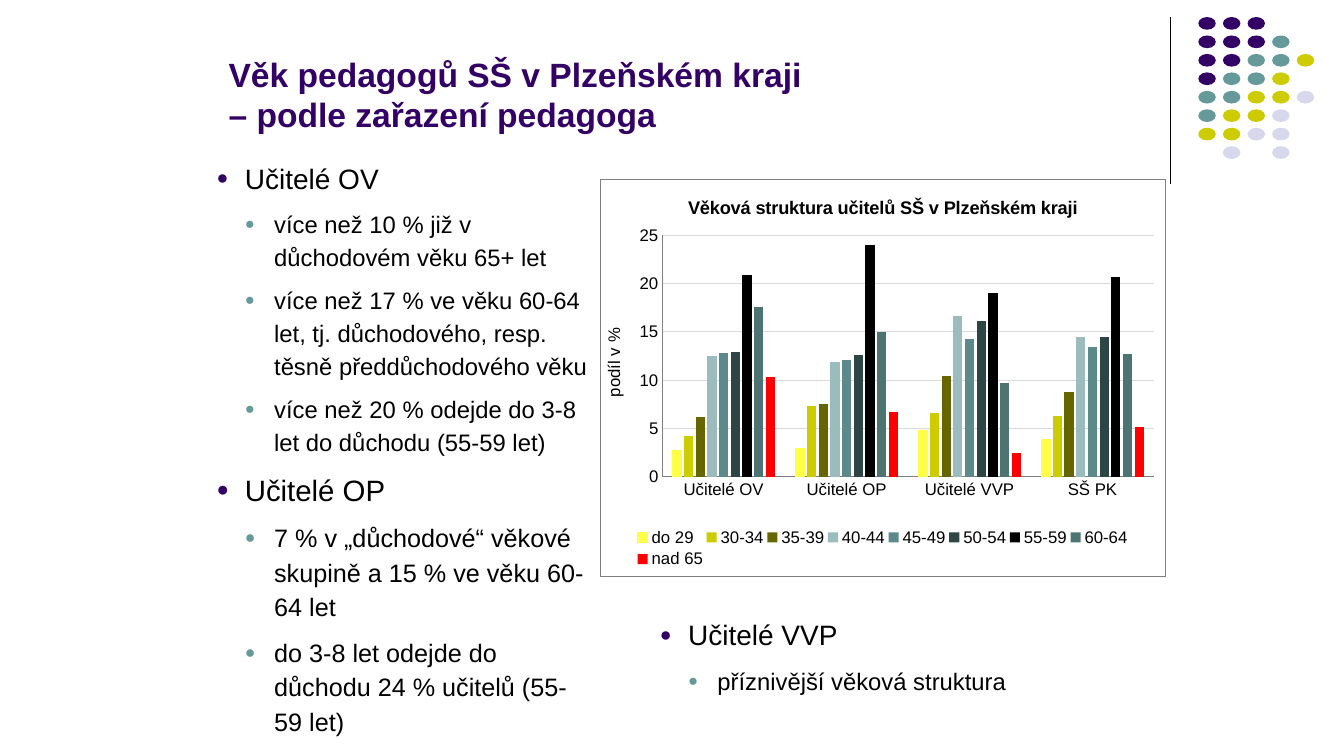
from lxml import etree
from pptx import Presentation
from pptx.chart.data import CategoryChartData
from pptx.dml.color import RGBColor
from pptx.enum.chart import XL_CHART_TYPE, XL_LEGEND_POSITION, XL_TICK_MARK
from pptx.enum.shapes import MSO_CONNECTOR, MSO_SHAPE
from pptx.enum.text import MSO_ANCHOR
from pptx.oxml import parse_xml
from pptx.oxml.ns import nsdecls, qn
from pptx.util import Cm, Pt

FONT = "Arial"
COLORS = {
    "purple": "330066", "teal": "669999", "olive": "CCCC00", "lavender": "D8D8EC",
    "black": "000000", "white": "FFFFFF", "axis": "808080", "grid": "D9D9D9",
}
DOT_ROWS = ["PPP", "PPPT", "PPTTO", "PTTO", "TTOOL", "TOOL", "OOLL", " L L"]
DOT_COLORS = {"P": "purple", "T": "teal", "O": "olive", "L": "lavender"}
CATEGORIES = ["Učitelé OV", "Učitelé OP", "Učitelé VVP", "SŠ PK"]
AGE_GROUPS = [
    ("do 29", (2.7, 2.9, 4.8, 3.9), "FFFF47"),
    ("30-34", (4.2, 7.3, 6.6, 6.3), "CCCC00"),
    ("35-39", (6.2, 7.5, 10.4, 8.8), "666600"),
    ("40-44", (12.5, 11.9, 16.6, 14.5), "9ABCBC"),
    ("45-49", (12.8, 12.1, 14.3, 13.4), "5C8A8A"),
    ("50-54", (12.9, 12.6, 16.1, 14.5), "2E4545"),
    ("55-59", (20.9, 24, 19, 20.7), "000000"),
    ("60-64", (17.6, 15, 9.7, 12.7), "4D7373"),
    ("nad 65", (10.3, 6.7, 2.5, 5.2), "FF0000"),
]
LEFT_POINTS = [
    (0, 20, "Učitelé OV"),
    (1, 17, "více než 10 % již v důchodovém věku 65+ let"),
    (1, 17, "více než 17 % ve věku 60-64 let, tj. důchodového, resp. těsně předdůchodového věku"),
    (1, 17, "více než 20 % odejde do 3-8 let do důchodu (55-59 let)"),
    (0, 21, "Učitelé OP"),
    (1, 18, "7 % v „důchodové“ věkové skupině a 15 % ve věku 60-64 let"),
    (1, 18, "do 3-8 let odejde do důchodu 24 % učitelů (55-59 let)"),
]
RIGHT_POINTS = [(0, 20, "Učitelé VVP"), (1, 17, "příznivější věková struktura")]


def rgb(name):
    """Return the named colour."""
    return RGBColor.from_string(COLORS[name])


def style_font(font, size, color="black", bold=False):
    """Set typeface, size, colour and weight."""
    font.name, font.size, font.bold = FONT, Pt(size), bold
    font.color.rgb = rgb(color)


def style_line(line, color):
    """Give a line its colour and the common thin width."""
    line.color.rgb = rgb(color)
    line.width = Pt(0.75)


def add_ornament(slide, left, top, height):
    """Draw the vertical rule and the dot grid to its right."""
    rule = slide.shapes.add_connector(
        MSO_CONNECTOR.STRAIGHT, Cm(left), Cm(top), Cm(left), Cm(top + height))
    style_line(rule.line, "black")
    etree.SubElement(rule._element.spPr, qn("a:effectLst"))
    dots = slide.shapes.add_group_shape()
    for row, codes in enumerate(DOT_ROWS):
        for column, code in enumerate(codes):
            if code == " ":
                continue
            dot = dots.shapes.add_shape(
                MSO_SHAPE.OVAL, Cm(left + 0.71 + column * 0.62),
                Cm(top + row * 0.465), Cm(0.44), Cm(0.32))
            dot.shadow.inherit = False
            dot.fill.solid()
            dot.fill.fore_color.rgb = rgb(DOT_COLORS[code])
            dot.line.fill.background()


def add_title(slide, left, top, width, height):
    """Place the bottom-anchored slide title."""
    text_frame = slide.shapes.add_textbox(Cm(left), Cm(top), Cm(width), Cm(height)).text_frame
    text_frame.word_wrap = True
    text_frame.vertical_anchor = MSO_ANCHOR.BOTTOM
    text_frame.text = "Věk pedagogů SŠ v Plzeňském kraji – podle zařazení pedagoga"
    style_font(text_frame.paragraphs[0].runs[0].font, 24, "purple", True)


def add_bullet(paragraph, level):
    """Give a paragraph the hanging bullet of its level."""
    margin, hanging, color = [(0.71, 0.71, "purple"), (1.45, 0.74, "teal")][level]
    properties = paragraph._p.get_or_add_pPr()
    properties.set("marL", str(Cm(margin)))
    properties.set("indent", str(-Cm(hanging)))
    bullet_color = etree.SubElement(properties, qn("a:buClr"))
    etree.SubElement(bullet_color, qn("a:srgbClr"), val=COLORS[color])
    etree.SubElement(properties, qn("a:buSzPct"), val="70000")
    etree.SubElement(properties, qn("a:buFont"), typeface=FONT)
    etree.SubElement(properties, qn("a:buChar"), char="●")


def add_points(slide, points, left, top, width, height):
    """Place a two-level bulleted list."""
    text_frame = slide.shapes.add_textbox(Cm(left), Cm(top), Cm(width), Cm(height)).text_frame
    text_frame.word_wrap = True
    text_frame.text = "\n".join(text for _, _, text in points)
    for paragraph, (level, size, _) in zip(text_frame.paragraphs, points):
        paragraph.level = level
        paragraph.line_spacing = 1.15
        paragraph.space_before = Pt(7.5)
        add_bullet(paragraph, level)
        style_font(paragraph.runs[0].font, size)


def set_layout(element, position, box, target=None):
    """Fix a chart part to a box given in fractions of the chart."""
    for old_layout in element.findall(qn("c:layout")):
        element.remove(old_layout)
    layout = etree.Element(qn("c:layout"))
    manual = etree.SubElement(layout, qn("c:manualLayout"))
    if target:
        etree.SubElement(manual, qn("c:layoutTarget"), val=target)
    for tag in ("xMode", "yMode"):
        etree.SubElement(manual, qn(f"c:{tag}"), val="edge")
    for tag, value in zip("xywh", box):
        etree.SubElement(manual, qn(f"c:{tag}"), val=str(value))
    element.insert(position, layout)


def frame_chart(chart):
    """Add the white background and thin border."""
    chart._chartSpace.find(qn("c:chart")).addnext(parse_xml(
        f'<c:spPr {nsdecls("c", "a")}><a:solidFill><a:srgbClr val="{COLORS["white"]}"/></a:solidFill>'
        f'<a:ln w="9525"><a:solidFill><a:srgbClr val="{COLORS["axis"]}"/></a:solidFill></a:ln></c:spPr>'))


def add_age_chart(slide, left, top, width, height):
    """Place the clustered column chart of teacher ages."""
    data = CategoryChartData()
    data.categories = CATEGORIES
    for name, values, _ in AGE_GROUPS:
        data.add_series(name, values)
    chart = slide.shapes.add_chart(
        XL_CHART_TYPE.COLUMN_CLUSTERED, Cm(left), Cm(top), Cm(width), Cm(height), data).chart
    style_font(chart.font, 12)
    chart.chart_title.text_frame.text = "Věková struktura učitelů SŠ v Plzeňském kraji"
    style_font(chart.chart_title.text_frame.paragraphs[0].runs[0].font, 13, bold=True)
    chart.has_legend = True
    chart.legend.position = XL_LEGEND_POSITION.BOTTOM
    chart.legend.include_in_layout = False
    style_font(chart.legend.font, 12)

    plot = chart.plots[0]
    plot.gap_width, plot.overlap, plot.vary_by_categories = 219, -27, False
    for series, (_, _, color) in zip(plot.series, AGE_GROUPS):
        series.format.fill.solid()
        series.format.fill.fore_color.rgb = RGBColor.from_string(color)
        series.invert_if_negative = False
    first_group = plot.series[0].format.line
    first_group.color.rgb = RGBColor.from_string(AGE_GROUPS[0][2])
    first_group.width = Pt(0.75)

    value_axis = chart.value_axis
    for axis in (chart.category_axis, value_axis):
        axis.major_tick_mark = axis.minor_tick_mark = XL_TICK_MARK.NONE
        style_line(axis.format.line, "axis")
        style_font(axis.tick_labels.font, 12)
    value_axis.minimum_scale, value_axis.maximum_scale, value_axis.major_unit = 0, 25, 5
    value_axis.tick_labels.number_format = "0"
    value_axis.tick_labels.number_format_is_linked = False
    style_line(value_axis.major_gridlines.format.line, "grid")
    value_axis.axis_title.text_frame.text = "podíl v %"
    style_font(value_axis.axis_title.text_frame.paragraphs[0].runs[0].font, 12)
    set_layout(chart._chartSpace.chart.plotArea, 0, (0.11, 0.14, 0.87, 0.61), "inner")
    set_layout(chart.legend._element, 1, (0.06, 0.87, 0.88, 0.12))
    frame_chart(chart)


def main():
    """Build the slide and save it."""
    presentation = Presentation()
    presentation.slide_width, presentation.slide_height = Cm(33.87), Cm(19.05)
    slide = presentation.slides.add_slide(presentation.slide_layouts[6])
    add_ornament(slide, 29.49, 0.43, 4.22)
    add_title(slide, 5.51, 0, 15.37, 3.51)
    add_age_chart(slide, 15.11, 4.52, 14.27, 10.01)
    add_points(slide, LEFT_POINTS, 5.21, 3.81, 9.91, 14.88)
    add_points(slide, RIGHT_POINTS, 16.38, 15.32, 13.23, 3.38)
    presentation.save("out.pptx")


if __name__ == "__main__":
    main()
